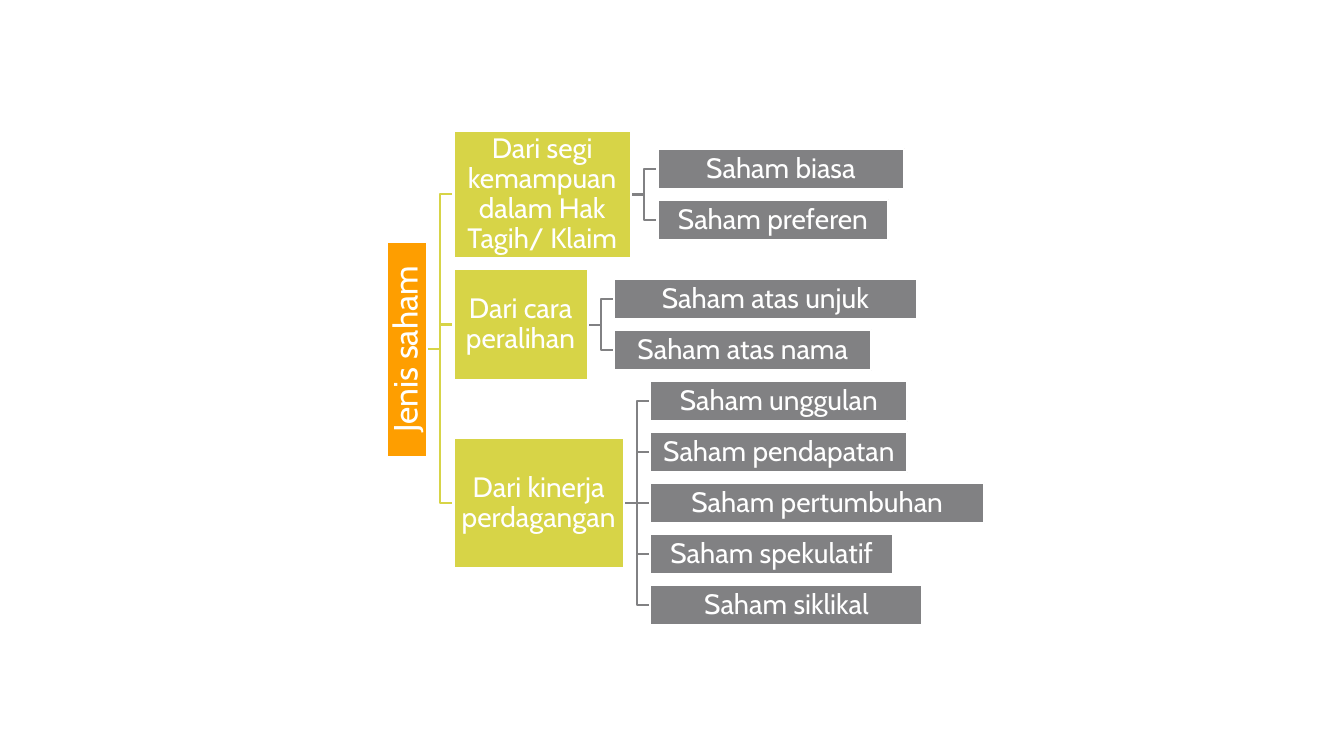
from pptx import Presentation
from pptx.dml.color import RGBColor
from pptx.enum import shapes, text
from pptx.oxml import parse_xml
from pptx.oxml.ns import nsdecls
from pptx.util import Cm, Pt

FONT = "Cabin"
WHITE, ORANGE, LIME, GREY = "FFFFFF", "FE9E00", "D7D447", "818183"

ROOT = ("Jenis saham", 10.25, 8.8, 5.41)
GROUPS = [
    ("Dari segi kemampuan dalam Hak Tagih/ Klaim", 4.9, 4.47, 3.2,
     [("Saham biasa", 6.22), ("Saham preferen", 5.82)]),
    ("Dari cara peralihan", 8.18, 3.38, 2.82,
     [("Saham atas unjuk", 7.62), ("Saham atas nama", 6.48)]),
    ("Dari kinerja perdagangan", 12.68, 4.29, 3.28,
     [("Saham unggulan", 6.48), ("Saham pendapatan", 6.48),
      ("Saham pertumbuhan", 8.41), ("Saham spekulatif", 6.12),
      ("Saham siklikal", 6.86)]),
]
BAR, PITCH, GAP = 1.02, 1.285, 0.67


def color(code):
    return RGBColor.from_string(code)


def box(slide, label, x, mid, wide, high, fill, size=20, turn=0):
    shape = slide.shapes.add_shape(
        shapes.MSO_SHAPE.RECTANGLE, Cm(x), Cm(mid - high / 2), Cm(wide), Cm(high))
    shape.shadow.inherit = False
    shape.rotation = turn
    shape.fill.solid()
    shape.fill.fore_color.rgb = color(fill)
    shape.line.color.rgb = color(WHITE)
    shape.line.width = Pt(1.5)
    frame = shape.text_frame
    frame.word_wrap = True
    frame.vertical_anchor = text.MSO_ANCHOR.MIDDLE
    frame.margin_left = frame.margin_right = Cm(0.03)
    frame.margin_top = frame.margin_bottom = Cm(0.03)
    para = frame.paragraphs[0]
    para.alignment = text.PP_ALIGN.CENTER
    para.line_spacing = 0.9
    run = para.add_run()
    run.text = label
    run.font.name = FONT
    run.font.size = Pt(size)
    run.font.color.rgb = color(WHITE)


def link(slide, x, start, end, code):
    kind = shapes.MSO_CONNECTOR.STRAIGHT if start == end else shapes.MSO_CONNECTOR.ELBOW
    line = slide.shapes.add_connector(kind, Cm(x), Cm(start), Cm(x + GAP), Cm(end))
    line.line.color.rgb = color(code)
    line.line.width = Pt(1.5)
    line._element.spPr.append(parse_xml(f"<a:effectLst {nsdecls('a')}/>"))


def main():
    deck = Presentation()
    deck.slide_width, deck.slide_height = Cm(33.87), Cm(19.05)
    slide = deck.slides.add_slide(deck.slide_layouts[6])

    label, axis, hub, length = ROOT
    edge = axis + BAR / 2
    left = edge + GAP
    for name, mid, wide, high, leaves in GROUPS:
        link(slide, edge, hub, mid, LIME)
        right = left + wide
        for i, (leaf, span) in enumerate(leaves):
            y = mid + (i - (len(leaves) - 1) / 2) * PITCH
            link(slide, right, mid, y, GREY)
            box(slide, leaf, right + GAP, y, span, BAR, GREY)
        box(slide, name, left, mid, wide, high, LIME)
    box(slide, label, axis - length / 2, hub, length, BAR, ORANGE, 24, 270)

    deck.save("out.pptx")


if __name__ == "__main__":
    main()
